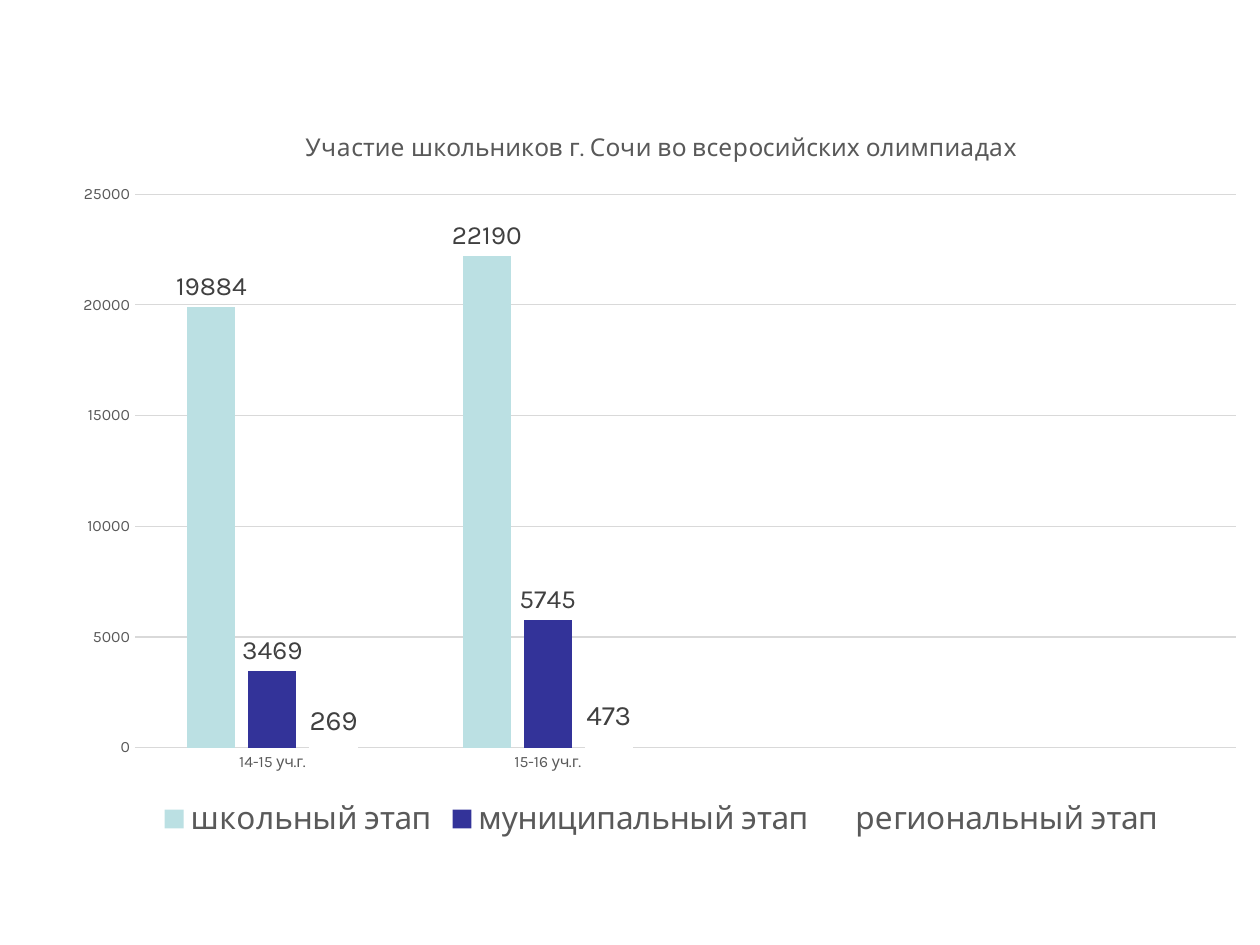
from dataclasses import dataclass

from pptx import Presentation
from pptx.chart.data import CategoryChartData
from pptx.dml.color import RGBColor
from pptx.enum.chart import XL_CHART_TYPE, XL_LABEL_POSITION, XL_LEGEND_POSITION, XL_TICK_MARK
from pptx.oxml import parse_xml
from pptx.oxml.ns import nsdecls, qn
from pptx.util import Cm, Pt

COLUMNS = XL_CHART_TYPE.COLUMN_CLUSTERED
OUTSIDE_END = XL_LABEL_POSITION.OUTSIDE_END
BOTTOM = XL_LEGEND_POSITION.BOTTOM
NO_TICK = XL_TICK_MARK.NONE


@dataclass(frozen=True)
class Theme:
    """Colours and type sizes of the slide."""

    font: str = "Karla"
    text: str = "595959"
    label: str = "404040"
    rule: str = "D9D9D9"
    background: str = "FFFFFF"
    title_size: int = 14
    axis_size: int = 9
    legend_size: int = 18


THEME = Theme()
TITLE = "Участие школьников г. Сочи во всеросийских олимпиадах"
YEARS = ("14-15 уч.г.", "15-16 уч.г.", "", "")
STAGES = (
    ("школьный этап", (19884, 22190, None, None), "BBE0E3", 15),
    ("муниципальный этап", (3469, 5745, None, None), "333399", 15),
    ("региональный этап", (269, 473, None, None), "FFFFFF", 16),
)


def style_font(font, size, color):
    """Apply the theme typeface with a size and colour."""
    font.name = THEME.font
    font.size = Pt(size)
    font.bold = False
    font.color.rgb = RGBColor.from_string(color)


def style_line(line):
    """Draw a thin grey rule."""
    line.color.rgb = RGBColor.from_string(THEME.rule)
    line.width = Pt(0.75)


def add_title(chart):
    """Put the heading above the columns."""
    frame = chart.chart_title.text_frame
    frame.text = TITLE
    style_font(frame.paragraphs[0].font, THEME.title_size, THEME.text)
    chart.chart_title.include_in_layout = False


def style_axes(chart):
    """Format both axes and the gridlines."""
    for axis in (chart.category_axis, chart.value_axis):
        axis.major_tick_mark = NO_TICK
        axis.minor_tick_mark = NO_TICK
        style_font(axis.tick_labels.font, THEME.axis_size, THEME.text)
    style_line(chart.category_axis.format.line)
    values = chart.value_axis
    values.minimum_scale, values.maximum_scale, values.major_unit = 0, 25000, 5000
    values.format.line.fill.background()
    style_line(values.major_gridlines.format.line)


def style_columns(chart):
    """Colour the series and show their values."""
    plot = chart.plots[0]
    plot.vary_by_categories = False
    plot.gap_width = 219
    plot.overlap = -27
    for series, (_, _, color, label_size) in zip(plot.series, STAGES):
        series.format.fill.solid()
        series.format.fill.fore_color.rgb = RGBColor.from_string(color)
        series.invert_if_negative = False
        labels = series.data_labels
        labels.show_value = True
        labels.position = OUTSIDE_END
        style_font(labels.font, label_size, THEME.label)


def add_legend(chart):
    """Place the legend under the columns."""
    chart.has_legend = True
    chart.legend.position = BOTTOM
    chart.legend.include_in_layout = False
    style_font(chart.legend.font, THEME.legend_size, THEME.text)


def place_plot(chart, x, y, w, h):
    """Fix the inner plot area as fractions of the chart."""
    area = chart.plots[0]._element.getparent()
    for layout in area.findall(qn("c:layout")):
        area.remove(layout)
    sizes = "".join(f'<c:{name} val="{value}"/>' for name, value in zip("xywh", (x, y, w, h)))
    area.insert(0, parse_xml(
        f'<c:layout {nsdecls("c")}><c:manualLayout><c:layoutTarget val="inner"/>'
        f'<c:xMode val="edge"/><c:yMode val="edge"/>{sizes}</c:manualLayout></c:layout>'))


def add_column_chart(page, left, top, width, height):
    """Add the column chart of participants by stage and year."""
    data = CategoryChartData()
    data.categories = YEARS
    for name, values, _, _ in STAGES:
        data.add_series(name, values)
    chart = page.shapes.add_chart(COLUMNS, left, top, width, height, data).chart
    style_font(chart.font, 10, "000000")
    add_title(chart)
    style_axes(chart)
    style_columns(chart)
    add_legend(chart)
    place_plot(chart, 0.06, 0.12, 0.92, 0.75)


def main():
    """Build and save the slide."""
    deck = Presentation()
    deck.slide_width, deck.slide_height = Cm(25.4), Cm(19.05)
    page = deck.slides.add_slide(deck.slide_layouts[6])
    page.background.fill.solid()
    page.background.fill.fore_color.rgb = RGBColor.from_string(THEME.background)
    add_column_chart(page, Cm(1.27), Cm(2.13), Cm(24.13), Cm(14.88))
    deck.save("out.pptx")


if __name__ == "__main__":
    main()
